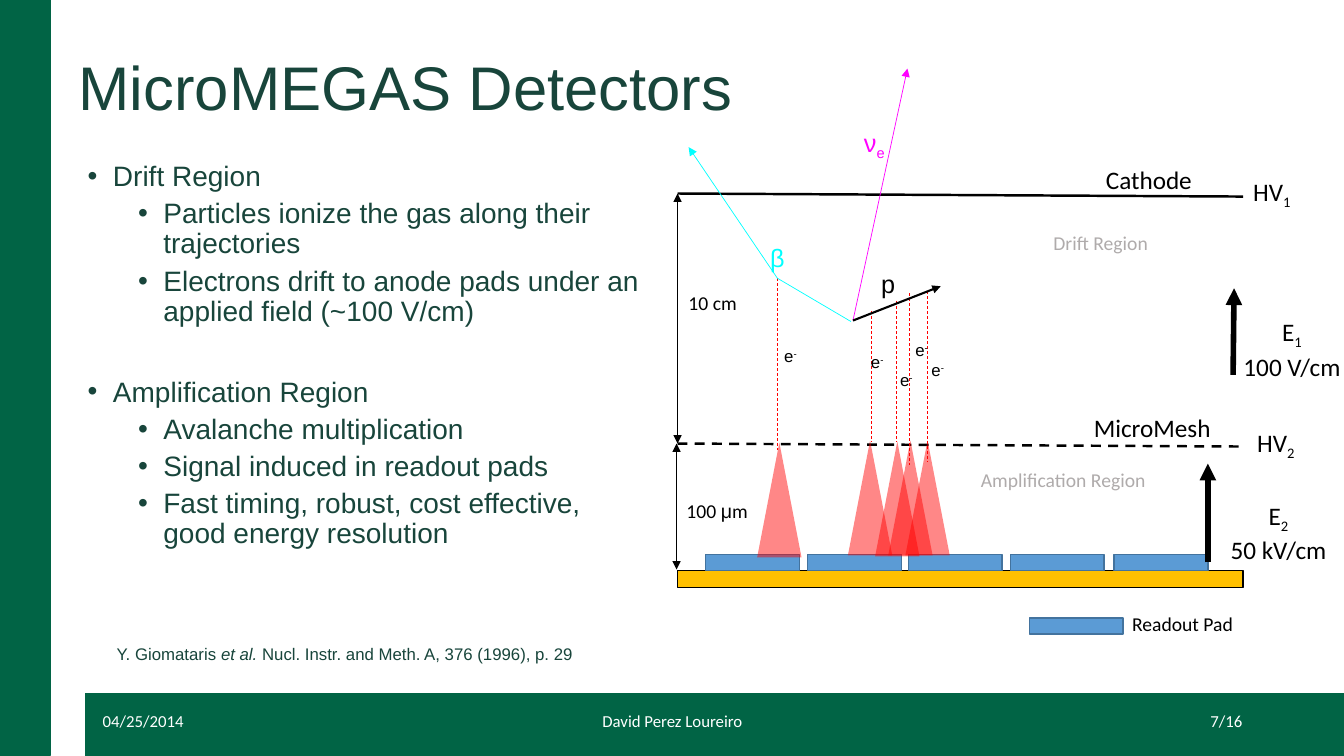
from lxml import etree
from pptx import Presentation
from pptx.dml.color import RGBColor
from pptx.enum import dml, shapes, text
from pptx.oxml.ns import qn
from pptx.util import Inches, Pt

GREEN, INK = "016445", "18453B"
BLACK, WHITE, GREY = "000000", "FFFFFF", "AFABAB"
RED, CYAN, MAGENTA = "FF0000", "00FFFF", "FF00FF"
LEFT, CENTER, RIGHT = text.PP_ALIGN.LEFT, text.PP_ALIGN.CENTER, text.PP_ALIGN.RIGHT
SUB, SUP = {"base": -25}, {"base": 30}

TITLE = "MicroMEGAS Detectors"
BULLETS = [  # level, text, space before
    (0, "Drift Region", 0),
    (1, "Particles ionize the gas along their trajectories", 5),
    (1, "Electrons drift to anode pads under an applied field (~100 V/cm)", 5),
    (0, "Amplification Region", 36),
    (1, "Avalanche multiplication", 5),
    (1, "Signal induced in readout pads", 5),
    (1, "Fast timing, robust, cost effective, good energy resolution", 5),
]
CITATION = [("Y. Giomataris ", {}), ("et al. ", {"italic": True}),
            ("Nucl. Instr. and Meth. A, 376 (1996), p. 29", {})]
FOOTER = [  # text, left, width, alignment
    ("04/25/2014", 0.92, 3, LEFT),
    ("David Perez Loureiro", 4.42, 4.5, CENTER),
    ("7/16", 9.42, 3, RIGHT),
]
LABELS = [  # paragraphs of runs, box, format
    ([[("HV", {}), ("1", SUB)]], (12.33, 1.7, 0.59, 0.4), {}),
    ([[("HV", {}), ("2", SUB)]], (12.37, 4.19, 0.59, 0.4), {}),
    ([[("E", {}), ("1", SUB)], "100 V/cm"], (12.2, 3.09, 1.23, 0.71), {"align": CENTER}),
    ([[("E", {}), ("2", SUB)], "50 kV/cm"], (12.07, 4.91, 1.22, 0.71), {"align": CENTER}),
    (["10 cm"], (6.73, 2.84, 0.68, 0.34), {"size": 14}),
    ([[("100 ", {}), ("μ", {"font": "Arial"}), ("m", {})]], (6.71, 4.9, 0.82, 0.34), {"size": 14}),
    (["Cathode"], (10.87, 1.58, 1.07, 0.4), {}),
    (["MicroMesh"], (10.75, 4.04, 1.37, 0.4), {}),
    (["Drift Region"], (10.35, 2.24, 1.7, 0.34), {"size": 14, "color": GREY}),
    (["Amplification Region"], (9.63, 4.59, 2.37, 0.34), {"size": 14, "color": GREY}),
    (["Readout Pad"], (11.13, 6.02, 2.2, 0.34), {"size": 14}),
    (["β"], (7.54, 2.36, 0.34, 0.4), {"font": "Arial", "color": CYAN}),
    ([[("ν", {}), ("e", SUB)]], (8.47, 1.21, 0.43, 0.4), {"font": "Arial", "color": MAGENTA}),
    (["p"], (8.64, 2.61, 0.34, 0.4), {"font": "Arial"}),
]
ELECTRON_LABELS = [(7.68, 3.38), (8.83, 3.62), (8.98, 3.32), (9.14, 3.52), (8.54, 3.44)]
PADS = [(7, 5.5), (8.01, 5.5), (9.01, 5.5), (10.02, 5.5), (11.05, 5.5), (10.21, 6.13)]
AVALANCHES = [(7.51, 4.39), (8.41, 4.37), (8.68, 4.38), (8.98, 4.37), (8.81, 4.37)]
DRIFTS = [(7.71, 2.76, 4.46), (8.64, 3.09, 4.39), (8.89, 2.99, 4.38),
          (9.02, 2.91, 4.61), (9.2, 2.89, 4.58)]  # x, top, bottom
ELECTRODES = [  # start, end, colour, width, format
    ((6.72, 4.4), (12.33, 4.43), BLACK, 1.75, {"dash": True}),
    ((6.72, 1.92), (12.33, 1.95), BLACK, 1.75, {}),
    ((6.72, 1.92), (6.72, 4.4), BLACK, 0.5, {"head": True, "tail": True}),
    ((6.71, 4.4), (6.71, 5.65), BLACK, 0.5, {"head": True, "tail": True}),
    ((11.98, 5.58), (11.98, 4.6), BLACK, 4, {"tail": True}),
    ((12.23, 3.72), (12.24, 2.86), BLACK, 4, {"tail": True}),
]
TRACKS = [
    ((8.46, 3.18), (9, 0.68), MAGENTA, 0.5, {"tail": True}),
    ((8.46, 3.18), (9.33, 2.84), BLACK, 1.5, {"tail": True}),
    ((8.44, 3.19), (7.71, 2.76), CYAN, 0.5, {}),
    ((7.71, 2.76), (6.83, 1.46), CYAN, 0.5, {"tail": True}),
]


def rgb(code):
    return RGBColor.from_string(code)


def add_runs(p, runs, size=18, color=BLACK, font="Calibri", align=LEFT):
    """Fill a paragraph from a string or a list of (text, format) runs."""
    p.alignment = align
    for words, fmt in [(runs, {})] if isinstance(runs, str) else runs:
        r = p.add_run()
        r.text = words
        r.font.size, r.font.name = Pt(size), fmt.get("font", font)
        r.font.color.rgb = rgb(color)
        if "italic" in fmt:
            r.font.italic = fmt["italic"]
        if "base" in fmt:
            r._r.get_or_add_rPr().set("baseline", str(fmt["base"] * 1000))


def add_label(paragraphs, box, wrap=False, anchor=text.MSO_ANCHOR.TOP, **fmt):
    tf = s.shapes.add_textbox(*map(Inches, box)).text_frame
    tf.word_wrap, tf.vertical_anchor = wrap, anchor
    for i, runs in enumerate(paragraphs):
        add_runs(tf.add_paragraph() if i else tf.paragraphs[0], runs, **fmt)


def add_block(box, fill, line=None, kind=shapes.MSO_SHAPE.RECTANGLE, alpha=None):
    sp = s.shapes.add_shape(kind, *map(Inches, box))
    sp.shadow.inherit = False
    sp.fill.solid()
    sp.fill.fore_color.rgb = rgb(fill)
    if alpha:
        clr = sp._element.spPr.find(".//" + qn("a:srgbClr"))
        etree.SubElement(clr, qn("a:alpha")).set("val", str(alpha * 1000))
    if line:
        sp.line.color.rgb, sp.line.width = rgb(line), Pt(1)
    else:
        sp.line.fill.background()


def add_line(start, end, color, width, dash=False, head=False, tail=False):
    c = s.shapes.add_connector(shapes.MSO_CONNECTOR.STRAIGHT, *map(Inches, start + end))
    c.line.color.rgb, c.line.width = rgb(color), Pt(width)
    if dash:
        c.line.dash_style = dml.MSO_LINE.DASH
    ln = c.line._get_or_add_ln()
    for tag, wanted in (("a:headEnd", head), ("a:tailEnd", tail)):
        if wanted:
            etree.SubElement(ln, qn(tag)).set("type", "triangle")
    etree.SubElement(c._element.spPr, qn("a:effectLst"))


def place(sp, box):
    sp.left, sp.top, sp.width, sp.height = map(Inches, box)
    sp.text_frame.word_wrap = True
    sp.text_frame.auto_size = text.MSO_AUTO_SIZE.NONE
    return sp.text_frame


prs = Presentation()
prs.slide_width, prs.slide_height = Inches(13.33), Inches(7.5)
s = prs.slides.add_slide(prs.slide_layouts[1])

# Title
tf = place(s.shapes.title, (0.68, 0.17, 11.5, 1.45))
tf.vertical_anchor = text.MSO_ANCHOR.MIDDLE
tf.paragraphs[0].line_spacing = 0.9
add_runs(tf.paragraphs[0], TITLE, size=44, color=INK, font="Arial")

# Bullet list
tf = place(s.placeholders[1], (0.77, 1.56, 5.67, 4.76))
tf.vertical_anchor = text.MSO_ANCHOR.TOP
for i, (level, words, before) in enumerate(BULLETS):
    p = tf.add_paragraph() if i else tf.paragraphs[0]
    p.level, p.line_spacing, p.space_before = level, 0.9, Pt(before)
    pPr = p._p.get_or_add_pPr()
    pPr.set("marL", str(Inches(0.25 + 0.5 * level)))
    pPr.set("indent", str(Inches(-0.25)))
    etree.SubElement(pPr, qn("a:buFont")).set("typeface", "Arial")
    etree.SubElement(pPr, qn("a:buChar")).set("char", "•")
    add_runs(p, words, size=20, color=INK, font="Arial")

# Green bars and footer
add_block((0.85, 6.88, 12.48, 0.62), GREEN, GREEN)
add_block((-0.02, -0.01, 0.52, 7.5), GREEN, GREEN)
for words, left, width, align in FOOTER:
    add_label([words], (left, 6.95, width, 0.4), wrap=True, size=12, color=WHITE,
              align=align, anchor=text.MSO_ANCHOR.MIDDLE)

# Readout plane, pads and electrodes
add_block((6.72, 5.66, 5.61, 0.17), "FFC000", BLACK)
for x, y in PADS:
    add_block((x, y, 0.93, 0.16), "5B9BD5", "43739E")
for start, end, color, width, fmt in ELECTRODES:
    add_line(start, end, color, width, **fmt)

# Drifting electrons and avalanches
for x, top, bottom in DRIFTS:
    add_line((x, top), (x, bottom), RED, 0.5, dash=True)
for x, y in AVALANCHES:
    add_block((x, y, 0.44, 1.14), RED, kind=shapes.MSO_SHAPE.ISOSCELES_TRIANGLE, alpha=47)

# Particle tracks
for start, end, color, width, fmt in TRACKS:
    add_line(start, end, color, width, **fmt)

# Labels and citation
for paragraphs, box, fmt in LABELS:
    add_label(paragraphs, box, **fmt)
for x, y in ELECTRON_LABELS:
    add_label([[("e", {}), ("-", SUP)]], (x, y, 0.33, 0.3), size=12, font="Arial")
add_label([CITATION], (1.06, 6.34, 4.77, 0.3), size=12, color=INK, font="Arial",
          anchor=text.MSO_ANCHOR.MIDDLE)

prs.save("out.pptx")
